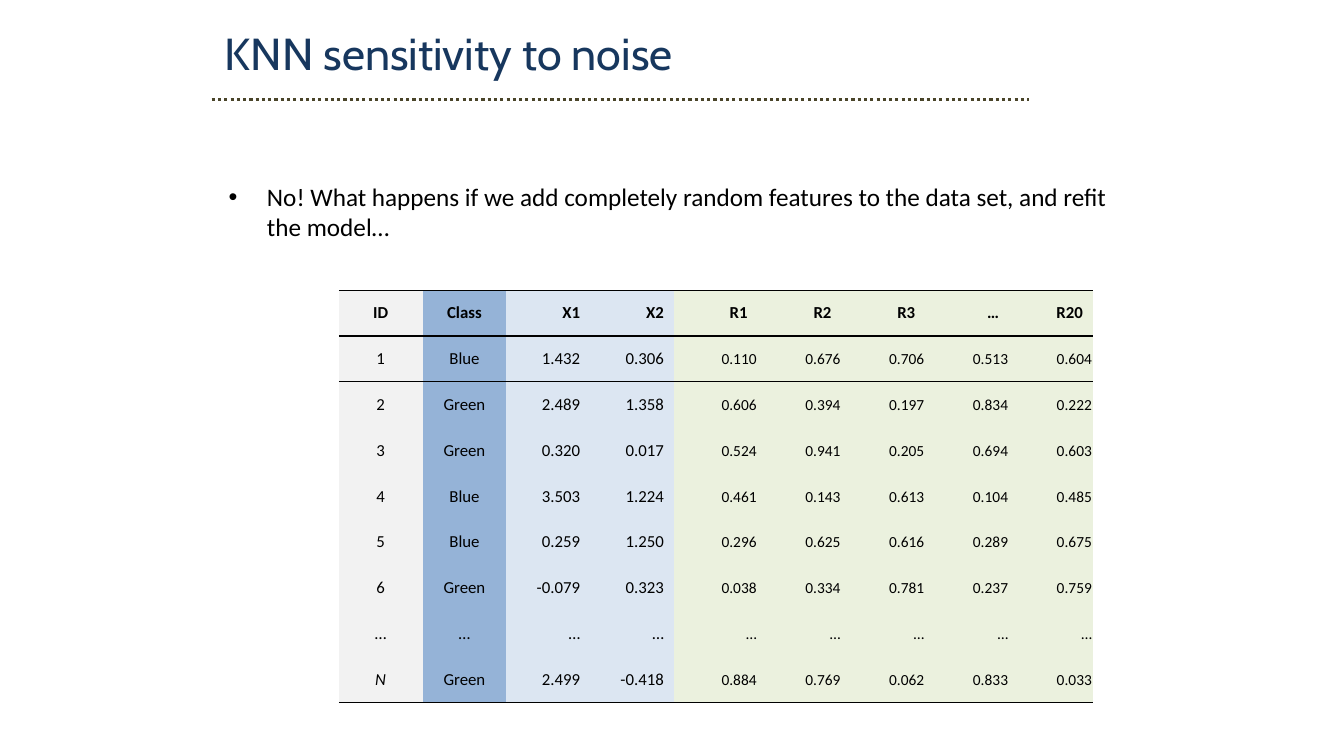
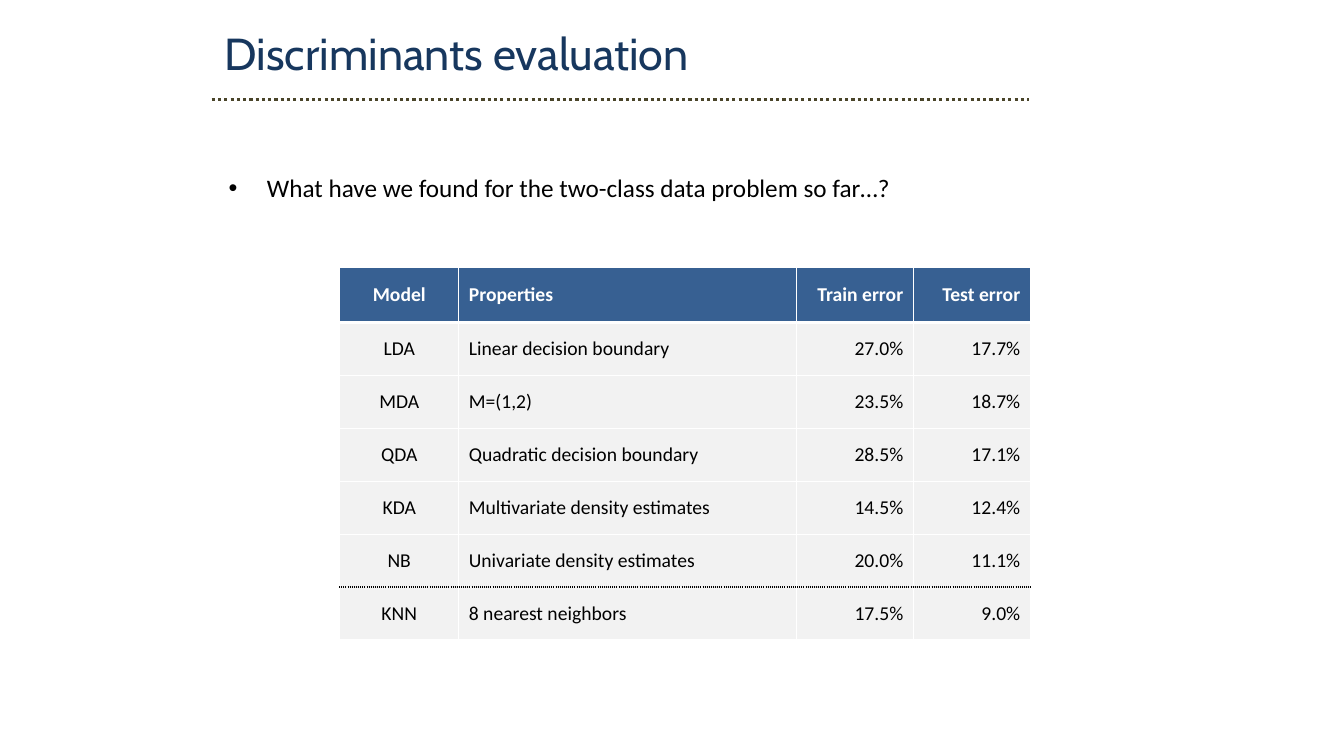
from dataclasses import dataclass

from lxml import etree
from pptx import Presentation
from pptx.dml.color import RGBColor
from pptx.enum.dml import MSO_LINE
from pptx.enum.shapes import MSO_CONNECTOR
from pptx.enum.text import MSO_ANCHOR, PP_ALIGN
from pptx.oxml import parse_xml
from pptx.oxml.ns import nsdecls, qn
from pptx.util import Inches, Pt

LEFT, CENTER, RIGHT = PP_ALIGN.LEFT, PP_ALIGN.CENTER, PP_ALIGN.RIGHT
MIDDLE = MSO_ANCHOR.MIDDLE
STRAIGHT = MSO_CONNECTOR.STRAIGHT
DOTS = MSO_LINE.ROUND_DOT

BLACK, WHITE, GREY = "000000", "FFFFFF", "F2F2F2"
NAVY, BROWN, STEEL = "17375E", "4A452A", "376092"
BLUE, PALE, GREEN = "95B3D7", "DCE6F2", "EBF1DE"
HEAD, BODY = "Cabin", "Calibri"
PLAIN = "{2D5ABB26-0587-4C30-8999-92F81FD0307C}"


@dataclass(frozen=True)
class Edge:
    color: str
    width: float = 1
    dash: str = "solid"


@dataclass(frozen=True)
class Column:
    width: float
    align: PP_ALIGN
    fill: str
    size: int
    tight: bool = False


@dataclass(frozen=True)
class Grid:
    left: float
    top: float
    columns: list[Column]
    heights: list[float]
    rows: list[list[str]]
    rules: dict[int, Edge]
    side: Edge | None = None
    head_fill: str | None = None
    head_ink: str = BLACK
    head_size: int = 12


def rgb(value: str) -> RGBColor:
    return RGBColor.from_string(value)


def style(para, font: str, size: int, color: str) -> None:
    para.font.name = font
    para.font.size = Pt(size)
    para.font.color.rgb = rgb(color)


def add_box(slide, left: float, top: float, width: float, height: float, text: str):
    box = slide.shapes.add_textbox(Inches(left), Inches(top), Inches(width), Inches(height))
    box.text_frame.word_wrap = True
    para = box.text_frame.paragraphs[0]
    para.text = text
    return para


def add_title(slide, text: str) -> None:
    style(add_box(slide, 2.13, 0.21, 8.94, 0.64, text), HEAD, 32, NAVY)
    line = slide.shapes.add_connector(
        STRAIGHT, Inches(2.1), Inches(0.99), Inches(10.21), Inches(0.99))
    line.line.color.rgb = rgb(BROWN)
    line.line.width = Pt(2.25)
    line.line.dash_style = DOTS
    etree.SubElement(line._element.spPr, qn("a:effectLst"))


def add_bullet(slide, top: float, text: str) -> None:
    para = add_box(slide, 2.17, top, 9, 0.75, text)
    props = para._p.get_or_add_pPr()
    props.set("marL", str(Inches(0.38)))
    props.set("indent", str(Inches(-0.38)))
    props.append(parse_xml(f'<a:buFont {nsdecls("a")} typeface="Arial"/>'))
    props.append(parse_xml(f'<a:buChar {nsdecls("a")} char="•"/>'))
    style(para, BODY, 18, BLACK)


def set_edge(cell, tag: str, edge: Edge | None) -> None:
    if edge is None:
        xml = f'<a:{tag} {nsdecls("a")} w="0"><a:noFill/></a:{tag}>'
    else:
        xml = (f'<a:{tag} {nsdecls("a")} w="{Pt(edge.width)}"><a:solidFill>'
               f'<a:srgbClr val="{edge.color}"/></a:solidFill>'
               f'<a:prstDash val="{edge.dash}"/></a:{tag}>')
    cell._tc.get_or_add_tcPr().append(parse_xml(xml))


def fill_cell(cell, grid: Grid, row: int, column: Column, text: str) -> None:
    head = row == 0
    edges = {"lnL": grid.side, "lnR": grid.side,
             "lnT": grid.rules.get(row), "lnB": grid.rules.get(row + 1)}
    for tag, edge in edges.items():
        set_edge(cell, tag, edge)
    cell.fill.solid()
    cell.fill.fore_color.rgb = rgb(head and grid.head_fill or column.fill)
    cell.vertical_anchor = MIDDLE
    if column.tight and not head:
        cell.margin_left = cell.margin_right = cell.margin_top = Inches(0.01)
        cell.margin_bottom = 0
    para = cell.text_frame.paragraphs[0]
    para.text = text
    para.alignment = column.align
    style(para, BODY, grid.head_size if head else column.size,
          grid.head_ink if head else BLACK)
    para.font.bold = head
    para.font.italic = text == "N"


def add_grid(slide, grid: Grid) -> None:
    width = sum(column.width for column in grid.columns)
    table = slide.shapes.add_table(
        len(grid.rows), len(grid.columns), Inches(grid.left), Inches(grid.top),
        Inches(width), Inches(sum(grid.heights))).table
    table.first_row = table.horz_banding = False
    table._tbl.tblPr.find(qn("a:tableStyleId")).text = PLAIN
    for col, column in enumerate(grid.columns):
        table.columns[col].width = Inches(column.width)
    for row, texts in enumerate(grid.rows):
        table.rows[row].height = Inches(grid.heights[row])
        for col, text in enumerate(texts):
            fill_cell(table.cell(row, col), grid, row, grid.columns[col], text)


SAMPLES = [line.split() for line in (
    "ID Class X1 X2 R1 R2 R3 … R20",
    "1 Blue 1.432 0.306 0.110 0.676 0.706 0.513 0.604",
    "2 Green 2.489 1.358 0.606 0.394 0.197 0.834 0.222",
    "3 Green 0.320 0.017 0.524 0.941 0.205 0.694 0.603",
    "4 Blue 3.503 1.224 0.461 0.143 0.613 0.104 0.485",
    "5 Blue 0.259 1.250 0.296 0.625 0.616 0.289 0.675",
    "6 Green -0.079 0.323 0.038 0.334 0.781 0.237 0.759",
    "… … … … … … … … …",
    "N Green 2.499 -0.418 0.884 0.769 0.062 0.833 0.033",
)]

MODELS = [
    ["Model", "Properties", "Train error", "Test error"],
    ["LDA", "Linear decision boundary", "27.0%", "17.7%"],
    ["MDA", "M=(1,2)", "23.5%", "18.7%"],
    ["QDA", "Quadratic decision boundary", "28.5%", "17.1%"],
    ["KDA", "Multivariate density estimates", "14.5%", "12.4%"],
    ["NB", "Univariate density estimates", "20.0%", "11.1%"],
    ["KNN", "8 nearest neighbors", "17.5%", "9.0%"],
]


def add_noise(slide) -> None:
    add_title(slide, "KNN sensitivity to noise")
    add_bullet(slide, 1.75, "No! What happens if we add completely random features "
                            "to the data set, and refit the model…")
    width = 7.48 / 9
    value = Column(width, RIGHT, PALE, 12)
    noise = Column(width, RIGHT, GREEN, 11, tight=True)
    columns = [Column(width, CENTER, GREY, 12), Column(width, CENTER, BLUE, 12)]
    columns += [value] * 2 + [noise] * 5
    rules = {row: Edge(BLACK) for row in (0, 1, 2, 9)}
    add_grid(slide, Grid(3.36, 2.88, columns, [4.09 / 9] * 9, SAMPLES, rules))


def add_models(slide) -> None:
    add_title(slide, "Discriminants evaluation")
    add_bullet(slide, 1.66, "What have we found for the two-class data problem so far…?")
    error = Column(1.16, RIGHT, GREY, 14)
    columns = [Column(1.18, CENTER, GREY, 14), Column(3.35, LEFT, GREY, 14), error, error]
    thin = Edge(WHITE)
    rules = {row: thin for row in range(8)}
    rules |= {1: Edge(WHITE, 3), 6: Edge(BLACK, 1, "sysDot")}
    heights = [0.55] + [3.15 / 6] * 6
    add_grid(slide, Grid(3.37, 2.65, columns, heights, MODELS, rules,
                         thin, STEEL, WHITE, 14))


def main() -> None:
    deck = Presentation()
    deck.slide_width, deck.slide_height = Inches(13.33), Inches(7.5)
    for build in (add_noise, add_models):
        build(deck.slides.add_slide(deck.slide_layouts[6]))
    deck.save("out.pptx")


if __name__ == "__main__":
    main()
